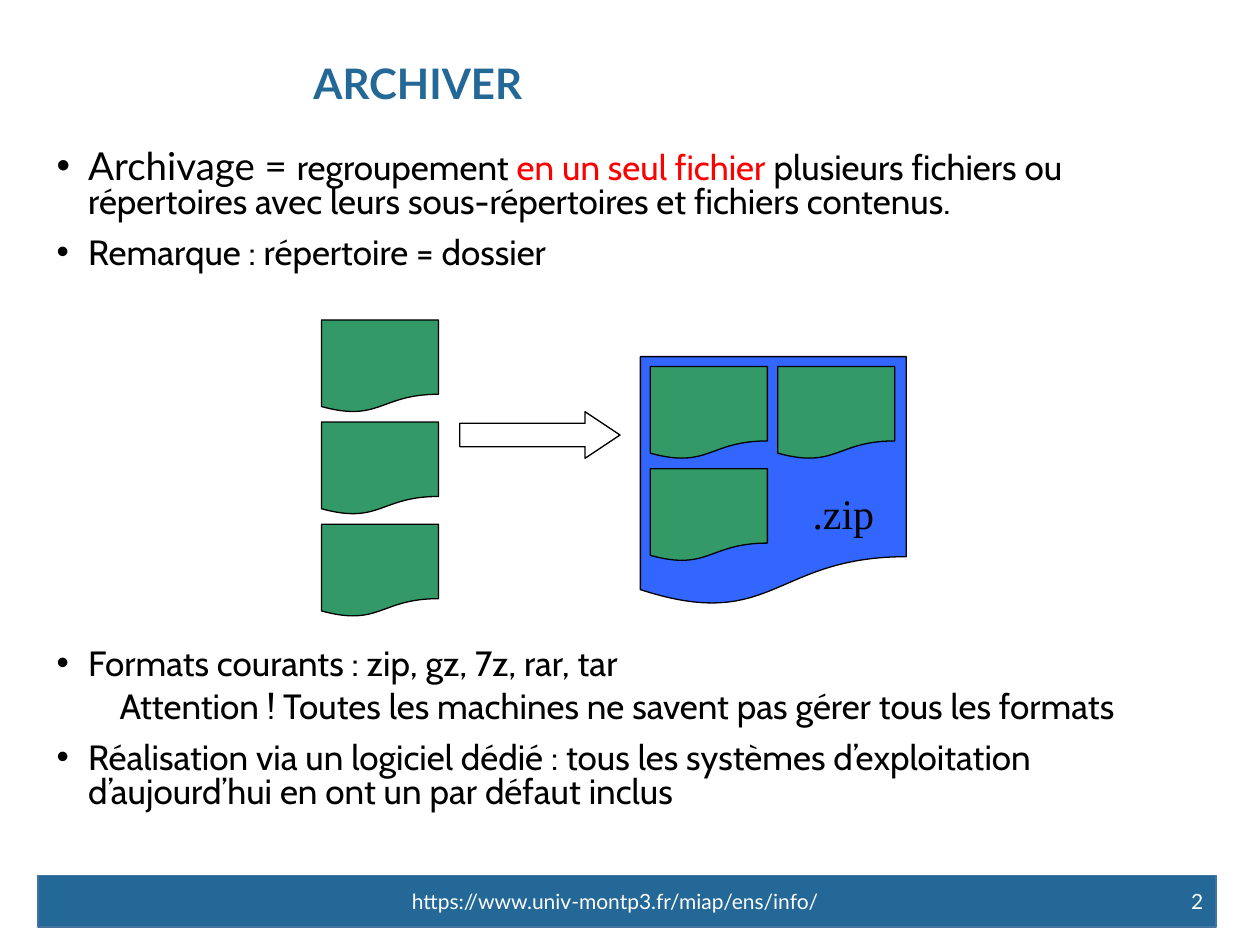
from dataclasses import dataclass
from lxml import etree
from pptx import Presentation
from pptx import util as u
from pptx.dml.color import RGBColor
from pptx.enum import shapes, text
from pptx.oxml.ns import qn


@dataclass(frozen=True)
class Theme:
    """Colours, fonts and type sizes of the slide."""
    blue: str = "236896"
    bar_line: str = "43739E"
    black: str = "000000"
    white: str = "FFFFFF"
    red: str = "FF0000"
    archive: str = "3366FF"
    document: str = "339966"
    heading_font: str = "Lato"
    body_font: str = "Cabin"
    label_font: str = "Times New Roman"
    title_size: int = 24
    lead_size: int = 22
    body_size: int = 20
    footer_size: int = 12


THEME = Theme()


def style_run(run, font, size, color, bold=False):
    """Set the typeface, size, colour and weight of a run."""
    run.font.name = font
    run.font.size = u.Pt(size)
    run.font.color.rgb = RGBColor.from_string(color)
    run.font.bold = bold


def add_box(parent, box, anchor=text.MSO_ANCHOR.TOP, wrap=True):
    """Add an empty text box and return its text frame."""
    frame = parent.add_textbox(*map(u.Cm, box)).text_frame
    frame.word_wrap = wrap
    frame.vertical_anchor = anchor
    return frame


def add_label(parent, box, words, font, size, color, bold=False,
              align=text.PP_ALIGN.LEFT, anchor=text.MSO_ANCHOR.MIDDLE, wrap=True):
    """Add a one-line text box."""
    frame = add_box(parent, box, anchor, wrap)
    frame.text = words
    paragraph = frame.paragraphs[0]
    paragraph.alignment = align
    style_run(paragraph.runs[0], font, size, color, bold)


def add_figure(parent, kind, box, fill, line, width=0.75):
    """Add a preset shape, unfilled when fill is None."""
    shape = parent.add_shape(kind, *map(u.Cm, box))
    shape.shadow.inherit = False
    if fill:
        shape.fill.solid()
        shape.fill.fore_color.rgb = RGBColor.from_string(fill)
    else:
        shape.fill.background()
    shape.line.color.rgb = RGBColor.from_string(line)
    shape.line.width = u.Pt(width)
    return shape


def indent(paragraph, bulleted):
    """Give a paragraph a hanging bullet or a plain deeper indent."""
    properties = paragraph._p.get_or_add_pPr()
    properties.set("marL", str(u.Cm(0.64 if bulleted else 1.27)))
    properties.set("indent", str(u.Cm(-0.64 if bulleted else 0)))
    if bulleted:
        etree.SubElement(properties, qn("a:buFont")).set("typeface", "Arial")
        etree.SubElement(properties, qn("a:buChar")).set("char", "•")
    else:
        etree.SubElement(properties, qn("a:buNone"))


def add_points(slide, box, points):
    """Write paragraphs given as (bulleted, [(words, font, size, color)])."""
    frame = add_box(slide.shapes, box)
    for index, (bulleted, pieces) in enumerate(points):
        paragraph = frame.add_paragraph() if index else frame.paragraphs[0]
        indent(paragraph, bulleted)
        paragraph.line_spacing = 0.8
        if index:
            paragraph.space_before = u.Pt(10 if bulleted else 5)
        for words, *style in pieces:
            run = paragraph.add_run()
            run.text = words
            style_run(run, *style)


def add_diagram(slide, box):
    """Draw three documents gathered by an arrow into one archive."""
    left, top, _, height = box
    group = slide.shapes.add_group_shape().shapes
    document = shapes.MSO_SHAPE.FLOWCHART_DOCUMENT
    doc_width, doc_height = 2.36, 1.87
    step_x, step_y = 2.57, 2.06
    archive_left, archive_top = left + 6.43, top + 0.74

    arrow = add_figure(group, shapes.MSO_SHAPE.RIGHT_ARROW,
                       (left + 2.79, top + 1.85, 3.23, 0.94), None, THEME.black)
    arrow.adjustments[0], arrow.adjustments[1] = 0.5, 0.75
    add_figure(group, document, (archive_left, archive_top, 5.36, 5.03),
               THEME.archive, THEME.black)

    loose = [(left, top + row * step_y) for row in range(3)]
    packed = [(archive_left + 0.2 + column * step_x, archive_top + 0.2 + row * step_y)
              for column, row in ((0, 0), (1, 0), (0, 1))]
    for x, y in loose + packed:
        add_figure(group, document, (x, y, doc_width, doc_height),
                   THEME.document, THEME.black)
    add_label(group, (left + 9.65, top + height - 2.74, 1.9, 1.14), ".zip",
              THEME.label_font, THEME.title_size, THEME.black,
              anchor=text.MSO_ANCHOR.TOP, wrap=False)


def add_footer(slide, box, address, number):
    """Draw the footer bar with its address and page number."""
    left, top, width, height = box
    add_figure(slide.shapes, shapes.MSO_SHAPE.RECTANGLE, box,
               THEME.blue, THEME.bar_line, 1)
    style = THEME.heading_font, THEME.footer_size, THEME.white
    add_label(slide.shapes, (left + 7.06, top, 9.17, height), address, *style,
              align=text.PP_ALIGN.CENTER)
    add_label(slide.shapes, (left + width - 5.72, top, 5.72, height), number, *style,
              align=text.PP_ALIGN.RIGHT)


def main():
    """Build the slide and save it."""
    presentation = Presentation()
    presentation.slide_width, presentation.slide_height = u.Cm(25.4), u.Cm(19.05)
    slide = presentation.slides.add_slide(presentation.slide_layouts[6])
    plain = THEME.body_font, THEME.body_size, THEME.black
    red = THEME.body_font, THEME.body_size, THEME.red
    lead = THEME.heading_font, THEME.lead_size, THEME.black

    add_footer(slide, (0.76, 17.65, 23.75, 1.04),
               "https://www.univ-montp3.fr/miap/ens/info/", "2")
    add_label(slide.shapes, (6.07, 0.48, 19.08, 2.36), "ARCHIVER",
              THEME.heading_font, THEME.title_size, THEME.blue, bold=True)
    add_points(slide, (0.89, 2.92, 23.6, 3), [
        (True, [("Archivage = ", *lead), ("regroupement ", *plain),
                ("en un seul fichier", *red),
                (" plusieurs fichiers ou répertoires avec leurs sous-répertoires"
                 " et fichiers contenus.", *plain)]),
        (True, [("Remarque : répertoire = dossier", *plain)]),
    ])
    add_diagram(slide, (6.48, 6.45, 11.79, 5.99))
    add_points(slide, (0.89, 12.98, 23.6, 4), [
        (True, [("Formats courants : zip, gz, 7z, rar, tar", *plain)]),
        (False, [("Attention ! Toutes les machines ne savent pas gérer tous les"
                  " formats", *plain)]),
        (True, [("Réalisation via un logiciel dédié : tous les systèmes"
                 " d’exploitation d’aujourd’hui en ont un par défaut inclus", *plain)]),
    ])
    presentation.save("out.pptx")


if __name__ == "__main__":
    main()
